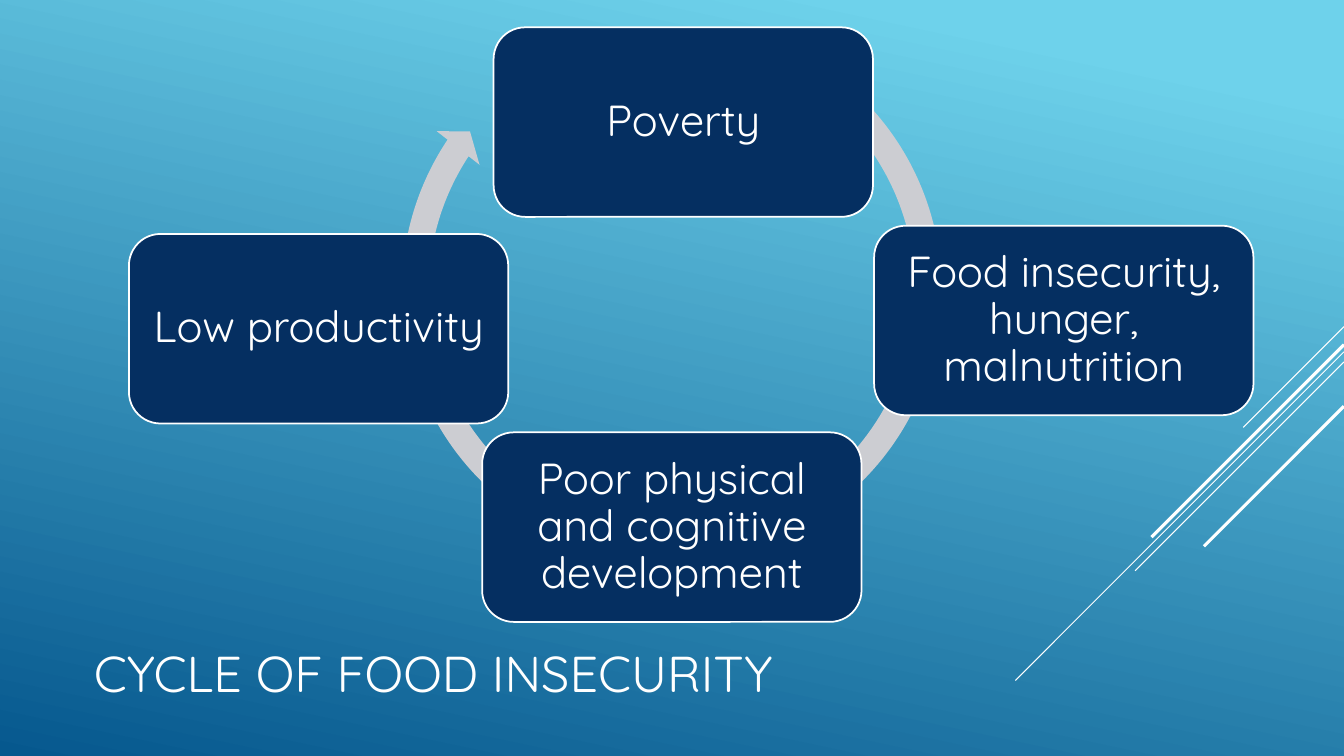
from lxml import etree
from pptx import Presentation
from pptx.dml.color import RGBColor
from pptx.enum.shapes import MSO_CONNECTOR, MSO_SHAPE
from pptx.enum.text import MSO_ANCHOR, PP_ALIGN
from pptx.oxml.ns import qn
from pptx.util import Pt

STRAIGHT = MSO_CONNECTOR.STRAIGHT
ROUNDED = MSO_SHAPE.ROUNDED_RECTANGLE
CIRCULAR_ARROW = MSO_SHAPE.CIRCULAR_ARROW
MIDDLE = MSO_ANCHOR.MIDDLE
LEFT, CENTER = PP_ALIGN.LEFT, PP_ALIGN.CENTER

FONT = "Quicksand"
COLORS = {
    "sky": "6ED2EB",
    "ocean": "06588E",
    "navy": "052F61",
    "ring": "CCCDD2",
    "white": "FFFFFF",
}
SLIDE_W, SLIDE_H = 960, 540
BOX_W, BOX_H = 271, 135.4

STREAKS = [
    (233.3, 72, 0.75),
    (251.3, 234.7, 0.75),
    (258.5, 149.2, 0.75),
    (246.2, 137.5, 2.25),
    (290.2, 100, 2.25),
]
STAGES = [
    ("Poverty", 352.6, 19.5),
    ("Food insecurity, hunger, malnutrition", 624.4, 161.2),
    ("Poor physical and cognitive development", 344.4, 308.8),
    ("Low productivity", 92.1, 167.1),
]


def rgb(name):
    return RGBColor.from_string(COLORS[name])


def set_background(slide):
    fill = slide.background.fill
    fill.gradient()
    fill.gradient_angle = 258
    for stop, position, color in zip(fill.gradient_stops, (0.1, 1), ("sky", "ocean")):
        stop.position = position
        stop.color.rgb = rgb(color)


def add_streak(slide, top, run, weight):
    line = slide.shapes.add_connector(
        STRAIGHT, Pt(SLIDE_W), Pt(top), Pt(SLIDE_W - run), Pt(top + run))
    line.line.color.rgb = rgb("white")
    line.line.width = Pt(weight)
    etree.SubElement(line._element.spPr, qn("a:effectLst"))


def write_text(sp, text, size=31, align=CENTER, spacing=0.9, inset=9):
    tf = sp.text_frame
    tf.word_wrap = True
    tf.vertical_anchor = MIDDLE
    tf.margin_left = tf.margin_right = Pt(inset)
    tf.margin_top = tf.margin_bottom = Pt(inset)
    p = tf.paragraphs[0]
    p.alignment = align
    p.line_spacing = spacing
    r = p.add_run()
    r.text = text
    r.font.name = FONT
    r.font.size = Pt(size)
    r.font.color.rgb = rgb("white")


def add_filled(slide, kind, left, top, width, height, color):
    sp = slide.shapes.add_shape(kind, Pt(left), Pt(top), Pt(width), Pt(height))
    sp.shadow.inherit = False
    sp.fill.solid()
    sp.fill.fore_color.rgb = rgb(color)
    sp.line.fill.background()
    return sp


def add_cycle_arrow(slide):
    sp = add_filled(slide, CIRCULAR_ARROW, 277.2, 4.4, 405.4, 405.4, "ring")
    for i, value in enumerate((0.047, 2.729, 128.152, 180.419, 0.048)):
        sp.adjustments[i] = value


def add_stage(slide, text, left, top):
    sp = add_filled(slide, ROUNDED, left, top, BOX_W, BOX_H, "navy")
    sp.line.color.rgb = rgb("white")
    sp.line.width = Pt(1.25)
    write_text(sp, text)


def add_title(slide, text):
    sp = slide.shapes.add_textbox(Pt(60), Pt(444.5), Pt(672), Pt(77.5))
    write_text(sp, text, size=36, align=LEFT, inset=7.2)


def main():
    prs = Presentation()
    prs.slide_width, prs.slide_height = Pt(SLIDE_W), Pt(SLIDE_H)
    slide = prs.slides.add_slide(prs.slide_layouts[6])
    set_background(slide)
    for streak in STREAKS:
        add_streak(slide, *streak)
    add_title(slide, "CYCLE OF FOOD INSECURITY")
    add_cycle_arrow(slide)
    for stage in STAGES:
        add_stage(slide, *stage)
    prs.save("out.pptx")


if __name__ == "__main__":
    main()
